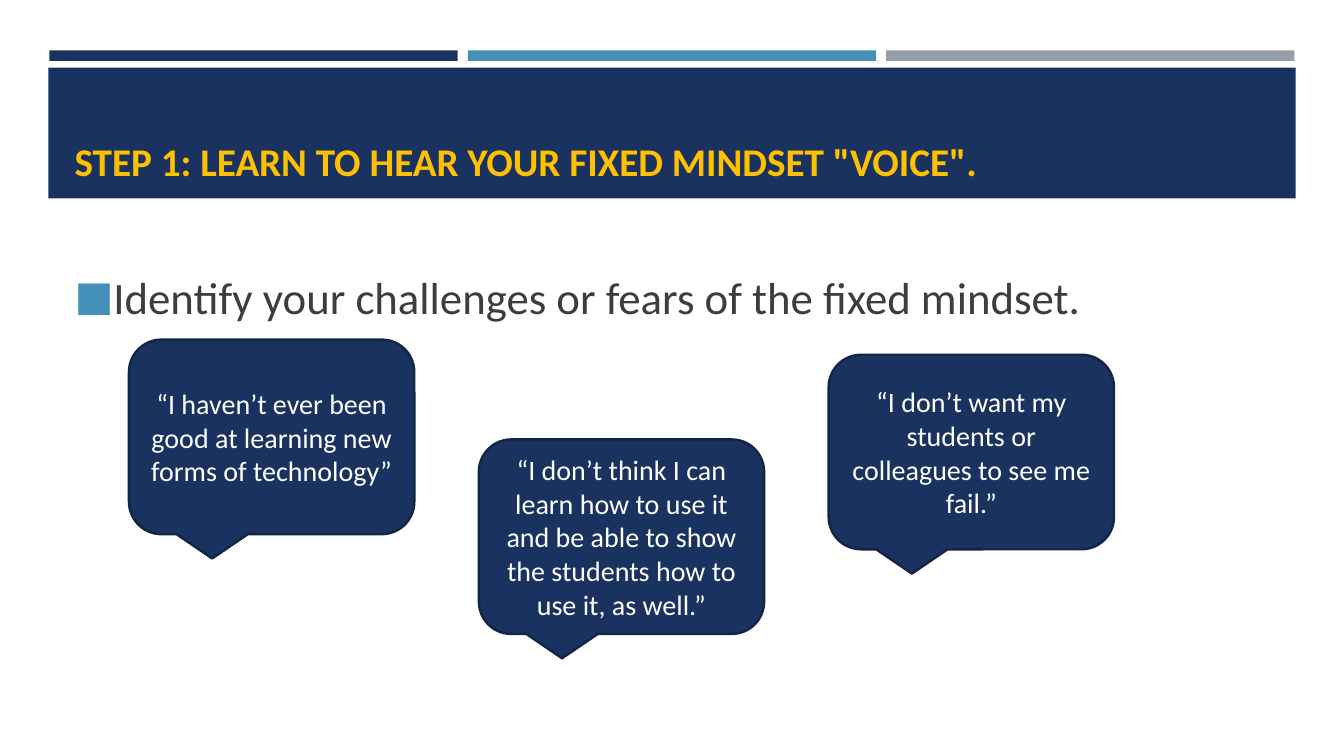
from dataclasses import dataclass

from lxml import etree
from pptx import Presentation
from pptx import util as u
from pptx.dml.color import RGBColor
from pptx.enum import shapes, text
from pptx.oxml import ns

NAVY = RGBColor(0x1A, 0x32, 0x60)
NAVY_EDGE = RGBColor(0x13, 0x25, 0x47)
BLUE = RGBColor(0x45, 0x90, 0xB8)
GREY = RGBColor(0x96, 0x9F, 0xA7)
GOLD = RGBColor(0xFF, 0xC0, 0x00)
CHARCOAL = RGBColor(0x3D, 0x3D, 0x3D)
WHITE = RGBColor(0xFF, 0xFF, 0xFF)
FONT = "Calibri"
SLIDE_W, SLIDE_H = u.Inches(13.33), u.Inches(7.5)


@dataclass(frozen=True)
class Box:
    """Place and size in percent of the slide's width and height."""
    left: float
    top: float
    width: float
    height: float

    def emu(self) -> tuple[int, int, int, int]:
        """Return left, top, width and height as lengths."""
        return (round(SLIDE_W * self.left / 100), round(SLIDE_H * self.top / 100),
                round(SLIDE_W * self.width / 100), round(SLIDE_H * self.height / 100))


@dataclass(frozen=True)
class Callout:
    """A quotation and the top of its bubble."""
    quote: str
    top: float


STRIPES = (NAVY, BLUE, GREY)
STRIPE_LEFT, STRIPE_PITCH = 3.68, 31.13
CALLOUT_LEFT, CALLOUT_PITCH = 9.6, 26.03
HEADER = Box(3.6, 8.93, 92.8, 17.33)
TITLE = Box(4.8, 10.27, 90.47, 14.8)
BODY = Box(4.8, 31.73, 90.47, 23.07)
CALLOUTS = (
    Callout("“I haven’t ever been good at learning new forms of technology”", 44.93),
    Callout("“I don’t think I can learn how to use it and be able to show "
            "the students how to use it, as well.”", 58.13),
    Callout("“I don’t want my students or colleagues to see me fail.”", 46.93),
)


def add_filled(slide, kind: shapes.MSO_SHAPE, box: Box, color: RGBColor):
    """Add a flat filled shape without outline."""
    sp = slide.shapes.add_shape(kind, *box.emu())
    sp.shadow.inherit = False
    sp.fill.solid()
    sp.fill.fore_color.rgb = color
    sp.line.fill.background()
    return sp


def write(sp, words: str, size: float, color: RGBColor, align: text.PP_ALIGN,
          anchor: text.MSO_ANCHOR):
    """Set the single paragraph of a shape and return it."""
    tf = sp.text_frame
    tf.text = words
    tf.word_wrap = True
    tf.auto_size = text.MSO_AUTO_SIZE.NONE
    tf.vertical_anchor = anchor
    p = tf.paragraphs[0]
    p.alignment = align
    p.font.name, p.font.size = FONT, u.Pt(size)
    p.font.color.rgb = color
    return p


def place(sp, box: Box) -> None:
    """Move a placeholder to a box."""
    sp.left, sp.top, sp.width, sp.height = box.emu()


def set_bullet(p, char: str, color: RGBColor, percent: int) -> None:
    """Give a paragraph a coloured bullet with a hanging indent."""
    pr = p._p.get_or_add_pPr()
    pr.set("marL", str(u.Inches(0.33)))
    pr.set("indent", str(-u.Inches(0.33)))
    clr = etree.SubElement(pr, ns.qn("a:buClr"))
    etree.SubElement(clr, ns.qn("a:srgbClr"), val=str(color))
    etree.SubElement(pr, ns.qn("a:buSzPct"), val=str(percent * 1000))
    etree.SubElement(pr, ns.qn("a:buFont"), typeface=FONT)
    etree.SubElement(pr, ns.qn("a:buChar"), char=char)
    pr.append(pr.find(ns.qn("a:defRPr")))


def add_callout(slide, callout: Callout, column: int) -> None:
    """Add a speech bubble in its column."""
    box = Box(CALLOUT_LEFT + column * CALLOUT_PITCH, callout.top, 21.23, 25.73)
    sp = add_filled(slide, shapes.MSO_SHAPE.ROUNDED_RECTANGULAR_CALLOUT, box, NAVY)
    sp.line.color.rgb = NAVY_EDGE
    sp.line.width = u.Pt(1.75)
    write(sp, callout.quote, 20, WHITE, text.PP_ALIGN.CENTER, text.MSO_ANCHOR.MIDDLE)


def main() -> None:
    """Build the slide and save it."""
    prs = Presentation()
    prs.slide_width, prs.slide_height = SLIDE_W, SLIDE_H
    slide = prs.slides.add_slide(prs.slide_layouts[1])
    title, body = slide.placeholders

    for column, color in enumerate(STRIPES):
        box = Box(STRIPE_LEFT + column * STRIPE_PITCH, 6.67, 30.38, 1.4)
        add_filled(slide, shapes.MSO_SHAPE.RECTANGLE, box, color)
    add_filled(slide, shapes.MSO_SHAPE.RECTANGLE, HEADER, NAVY)

    for sp, box in ((title, TITLE), (body, BODY)):
        place(sp, box)
        slide.shapes._spTree.append(sp._element)
    p = write(title, 'STEP 1: LEARN TO HEAR YOUR FIXED MINDSET "VOICE".', 28, GOLD,
              text.PP_ALIGN.LEFT, text.MSO_ANCHOR.BOTTOM)
    p.font.bold = True
    p = write(body, "Identify your challenges or fears of the fixed mindset.", 32, CHARCOAL,
              text.PP_ALIGN.LEFT, text.MSO_ANCHOR.MIDDLE)
    p.space_before, p.space_after = u.Pt(6.4), u.Pt(6)
    set_bullet(p, "■", BLUE, 92)
    body.text_frame.margin_bottom = u.Inches(0.65)

    for column, callout in enumerate(CALLOUTS):
        add_callout(slide, callout, column)
    prs.save("out.pptx")


if __name__ == "__main__":
    main()
